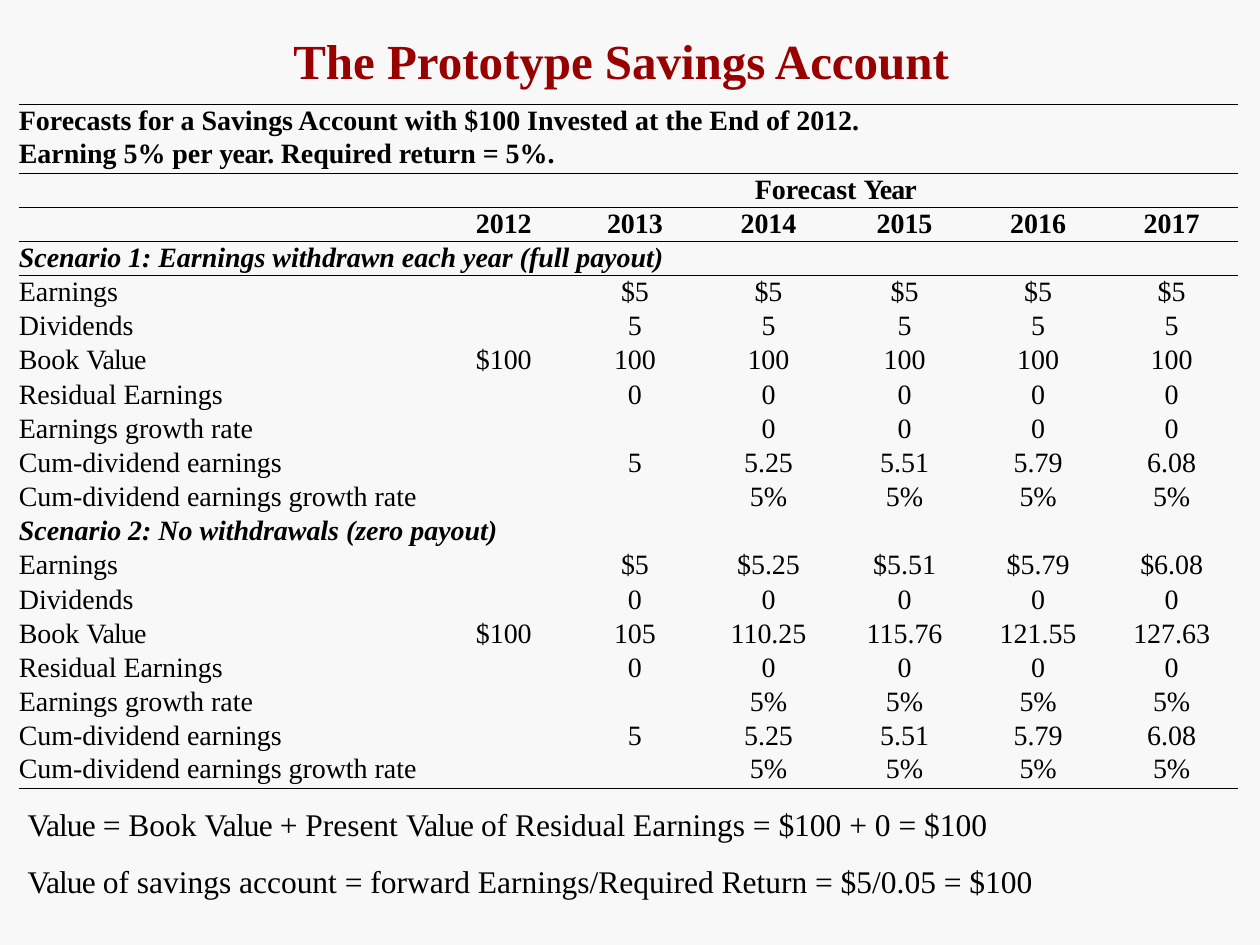
from itertools import groupby

from lxml.etree import SubElement
from pptx import Presentation
from pptx.dml.color import RGBColor
from pptx.enum.shapes import MSO_SHAPE
from pptx.enum.text import MSO_AUTO_SIZE, PP_ALIGN
from pptx.oxml.ns import qn
from pptx.util import Inches, Pt

FONT = "Times New Roman"
BLACK, RED, PAPER = "000000", "990000", "F8F8F8"
NO_STYLE = "{2D5ABB26-0587-4C30-8999-92F81FD0307C}"
TIGHT_WORDS = {"Value": -50, "Year": -50, "year.": -30}
COLUMN_WIDTHS = [3.32, 1.06, 1.02, 1.1, 1.06, 1.06, 1.06]
RULED_ROWS = {1, 2, 3, 4, 19}
LINE_HEIGHTS = {1: 17.8, 2: 18.6, 3: 18.6, 19: 17.7}
LABELS = [
    "Earnings",
    "Dividends",
    "Book Value",
    "Residual Earnings",
    "Earnings growth rate",
    "Cum-dividend earnings",
    "Cum-dividend earnings growth rate",
]
CUM_DIVIDEND = ["", "5", "5.25", "5.51", "5.79", "6.08"]
GROWTH = ["", "", "5%", "5%", "5%", "5%"]
ZEROS = [""] + ["0"] * 5
FULL_PAYOUT = [
    [""] + ["$5"] * 5,
    [""] + ["5"] * 5,
    ["$100"] + ["100"] * 5,
    ZEROS,
    ["", ""] + ["0"] * 4,
    CUM_DIVIDEND,
    GROWTH,
]
ZERO_PAYOUT = [
    ["", "$5", "$5.25", "$5.51", "$5.79", "$6.08"],
    ZEROS,
    ["$100", "105", "110.25", "115.76", "121.55", "127.63"],
    ZEROS,
    GROWTH,
    CUM_DIVIDEND,
    GROWTH,
]
HEADINGS = {
    0: "Forecasts for a Savings Account with $100 Invested at the End of 2012.",
    1: "Earning 5% per year. Required return = 5%.",
    2: "Forecast Year",
    4: "Scenario 1: Earnings withdrawn each year (full payout)",
    12: "Scenario 2: No withdrawals (zero payout)",
}
CLOSING = [
    "Value = Book Value + Present Value of Residual Earnings = $100 + 0 = $100",
    "Value of savings account = forward Earnings/Required Return = $5/0.05 = $100",
]


def color(value):
    """Turn a hex string into a colour."""
    return RGBColor.from_string(value)


def add_text(para, text, size, ink=BLACK, bold=False, italic=False):
    """Add text as runs, with closer letters in the tight words."""
    groups = groupby(text.split(), lambda word: TIGHT_WORDS.get(word, 0))
    pieces = [(" ".join(words), gap) for gap, words in groups]
    for index, (piece, gap) in enumerate(pieces):
        span = para.add_run()
        span.text = piece + (" " if index < len(pieces) - 1 else "")
        span.font.name = FONT
        span.font.size = Pt(size)
        span.font.bold = bold
        span.font.italic = italic
        span.font.color.rgb = color(ink)
        if gap:
            span.font._element.set("spc", str(gap))


def add_box(page, left, top, width, height):
    """Add a wrapping text box without margins and return its frame."""
    box = page.shapes.add_textbox(Inches(left), Inches(top), Inches(width), Inches(height))
    frame = box.text_frame
    frame.word_wrap = True
    frame.auto_size = MSO_AUTO_SIZE.SHAPE_TO_FIT_TEXT
    frame.margin_left = frame.margin_right = frame.margin_bottom = 0
    frame.margin_top = Inches(0.01)
    return frame


def add_rule(cell, edge):
    """Draw a thin black line on one edge of a cell."""
    properties = cell._tc.get_or_add_tcPr()
    line = SubElement(properties, qn(f"a:{edge}"), w=str(Pt(0.5)))
    SubElement(SubElement(line, qn("a:solidFill")), qn("a:srgbClr"), val=BLACK)


def prepare_cell(cell, row):
    """Give a cell its margins, rules, fill and line height."""
    cell.margin_left = cell.margin_right = cell.margin_top = cell.margin_bottom = 0
    if row == 0:
        add_rule(cell, "lnT")
    if row in RULED_ROWS:
        add_rule(cell, "lnB")
    cell.fill.solid()
    cell.fill.fore_color.rgb = color(PAPER)
    para = cell.text_frame.paragraphs[0]
    para.line_spacing = Pt(LINE_HEIGHTS.get(row, 18.4))
    SubElement(para._p, qn("a:endParaRPr"), sz="1600")


def fill_heading(table, row, text):
    """Write a bold heading across the whole row."""
    cell = table.cell(row, 0)
    cell.merge(table.cell(row, len(COLUMN_WIDTHS) - 1))
    para = cell.text_frame.paragraphs[0]
    if text == "Forecast Year":
        para._p.get_or_add_pPr().set("marL", str(Inches(5.84)))
    add_text(para, text, 16, bold=True, italic=text.startswith("Scenario"))


def fill_row(table, row, values, bold=False):
    """Write a label and its yearly values."""
    for column, value in enumerate(values):
        cell = table.cell(row, column)
        para = cell.text_frame.paragraphs[0]
        if column == 1:
            para.alignment = PP_ALIGN.RIGHT
            cell.margin_right = Inches(0.31)
        elif column > 1:
            para.alignment = PP_ALIGN.CENTER
        add_text(para, value, 16, bold=bold)


def add_forecast_table(page):
    """Add the table of both scenarios."""
    rows = {3: [""] + [str(year) for year in range(2012, 2018)]}
    for first, scenario in ((5, FULL_PAYOUT), (13, ZERO_PAYOUT)):
        for offset, (label, values) in enumerate(zip(LABELS, scenario)):
            rows[first + offset] = [label] + values
    count = len(rows) + len(HEADINGS)
    table = page.shapes.add_table(count, len(COLUMN_WIDTHS), Inches(0.15), Inches(0.83),
                                  Inches(9.68), Inches(5.43)).table
    table.first_row = table.horz_banding = False
    table._tbl.tblPr.find(qn("a:tableStyleId")).text = NO_STYLE
    for column, width in zip(table.columns, COLUMN_WIDTHS):
        column.width = Inches(width)
    for row in range(count):
        for column in range(len(COLUMN_WIDTHS)):
            prepare_cell(table.cell(row, column), row)
        if row in HEADINGS:
            fill_heading(table, row, HEADINGS[row])
        else:
            fill_row(table, row, rows[row], bold=row == 3)


def add_backdrop(page, deck):
    """Cover the whole slide with the paper colour."""
    backdrop = page.shapes.add_shape(MSO_SHAPE.RECTANGLE, 0, 0, deck.slide_width, deck.slide_height)
    backdrop.shadow.inherit = False
    backdrop.fill.solid()
    backdrop.fill.fore_color.rgb = color(PAPER)
    backdrop.line.fill.background()


def add_title(page):
    """Add the slide title."""
    para = add_box(page, 2.31, 0.23, 5.24, 0.49).paragraphs[0]
    para.alignment = PP_ALIGN.CENTER
    para.space_before = Pt(0.9)
    add_text(para, "The Prototype Savings Account", 28, RED, bold=True)


def add_closing(page):
    """Add the two valuation lines under the table."""
    frame = add_box(page, 0.22, 6.25, 8.2, 0.89)
    for index, text in enumerate(CLOSING):
        para = frame.add_paragraph() if index else frame.paragraphs[0]
        para.line_spacing = 1.44
        para.space_before = Pt(1)
        add_text(para, text, 18)


def main():
    """Build and save the slide."""
    deck = Presentation()
    deck.slide_width, deck.slide_height = Inches(10), Inches(7.5)
    page = deck.slides.add_slide(deck.slide_layouts[6])
    add_backdrop(page, deck)
    add_title(page)
    add_forecast_table(page)
    add_closing(page)
    deck.save("out.pptx")


if __name__ == "__main__":
    main()
